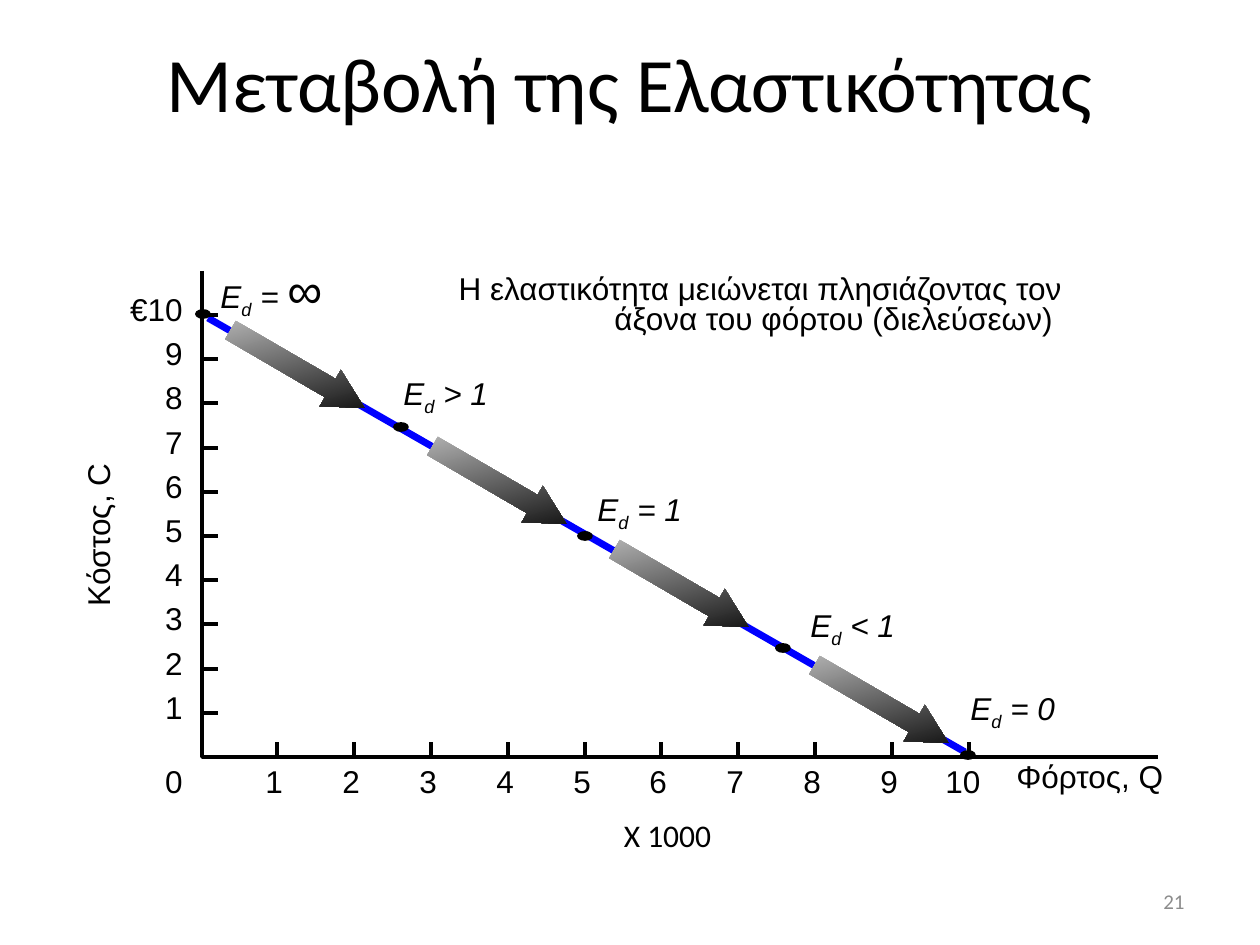
from pptx import Presentation
from pptx.dml.color import RGBColor
from pptx.enum.shapes import MSO_CONNECTOR, MSO_SHAPE
from pptx.enum.text import MSO_ANCHOR, MSO_AUTO_SIZE, PP_ALIGN
from pptx.oxml.xmlchemy import OxmlElement
from pptx.util import Pt

BLACK = RGBColor(0x00, 0x00, 0x00)
BLUE = RGBColor(0x00, 0x00, 0xFF)
SILVER = RGBColor(0xBC, 0xBC, 0xBC)
GRAY = RGBColor(0x8C, 0x8C, 0x8C)
LEFT, CENTER, RIGHT = PP_ALIGN.LEFT, PP_ALIGN.CENTER, PP_ALIGN.RIGHT
TOP, MIDDLE = MSO_ANCHOR.TOP, MSO_ANCHOR.MIDDLE
FIT_SHAPE = MSO_AUTO_SIZE.SHAPE_TO_FIT_TEXT
STRAIGHT = MSO_CONNECTOR.STRAIGHT
OVAL, RIGHT_ARROW = MSO_SHAPE.OVAL, MSO_SHAPE.RIGHT_ARROW

EMU_PER_PX = 914400 / 126
SLIDE_WIDTH, SLIDE_HEIGHT = 1260, 945
TITLE_ONLY = 5

ORIGIN_X, ORIGIN_Y = 202, 757
AXIS_TOP, AXIS_RIGHT = 271, 1158
FIRST_TICK_X, LAST_TICK_X = 277, 969
TOP_TICK_Y = 315
TICK_COUNT = 10

POINTS = [
    ((203, 314), (208, 253), " = ", "∞"),
    ((401, 427), (391, 368), " > 1", ""),
    ((585, 536), (585, 484), " = 1", ""),
    ((783, 648), (798, 600), " < 1", ""),
    ((968, 755), (958, 683), " = 0", ""),
]
ARROWS = [(220, 348), (422, 464), (604, 567), (804, 683)]


def px(length):
    return round(length * EMU_PER_PX)


def add_run(paragraph, text, size=18, font="Arial", color=BLACK, italic=False, baseline=0):
    run = paragraph.add_run()
    run.text = text
    run.font.size = Pt(size)
    run.font.name = font
    run.font.color.rgb = color
    run.font.italic = italic
    if baseline:
        run._r.get_or_add_rPr().set("baseline", str(baseline * 1000))


class SlideBuilder:
    line_width = 2

    def __init__(self, slide):
        self.slide = slide
        self.shapes = slide.shapes

    def place(self, shape, left, top, width, height):
        shape.left, shape.top = px(left), px(top)
        shape.width, shape.height = px(width), px(height)

    def title(self, text, box):
        shape = self.shapes.title
        self.place(shape, *box)
        shape.text_frame.vertical_anchor = MIDDLE
        paragraph = shape.text_frame.paragraphs[0]
        paragraph.alignment = CENTER
        add_run(paragraph, text, size=44, font="Calibri")

    def text(self, text, box, align=LEFT, wrap=False, anchor=TOP, spacing=None, rotation=0, **style):
        shape = self.shapes.add_textbox(*map(px, box))
        shape.rotation = rotation
        frame = shape.text_frame
        frame.word_wrap = wrap
        frame.auto_size = FIT_SHAPE
        frame.vertical_anchor = anchor
        paragraph = frame.paragraphs[0]
        paragraph.alignment = align
        if spacing:
            paragraph.line_spacing = spacing
        add_run(paragraph, text, **style)
        return paragraph

    def line(self, start, end, color=BLACK, width=line_width):
        connector = self.shapes.add_connector(STRAIGHT, *map(px, start + end))
        connector.line.color.rgb = color
        connector.line.width = Pt(width)
        connector._element.spPr.append(OxmlElement("a:effectLst"))

    def axes(self, *corners):
        first, *rest = [tuple(map(px, corner)) for corner in corners]
        builder = self.shapes.build_freeform(*first)
        builder.add_line_segments(rest, close=False)
        shape = builder.convert_to_shape()
        shape.shadow.inherit = False
        shape.fill.background()
        shape.line.color.rgb = BLACK
        shape.line.width = Pt(self.line_width)

    def dot(self, center, width=14, height=8):
        x, y = center
        shape = self.shapes.add_shape(OVAL, *map(px, (x - width / 2, y - height / 2, width, height)))
        shape.shadow.inherit = False
        shape.fill.solid()
        shape.fill.fore_color.rgb = BLACK
        shape.line.color.rgb = BLACK
        shape.line.width = Pt(1)

    def elasticity(self, position, relation, symbol):
        width, height = (151, 71) if symbol else (140, 63)
        paragraph = self.text("E", (*position, width, height), italic=True)
        add_run(paragraph, "d", italic=True, baseline=-25)
        add_run(paragraph, relation, italic=True)
        if symbol:
            add_run(paragraph, symbol, size=28)

    def arrow(self, position):
        shape = self.shapes.add_shape(RIGHT_ARROW, *map(px, (*position, 155, 42)))
        shape.shadow.inherit = False
        shape.adjustments[0] = 0.5
        shape.adjustments[1] = 0.94
        shape.rotation = 30.2
        shape.line.fill.background()
        shape.fill.gradient()
        shape.fill.gradient_angle = 315
        for stop, position, color in zip(shape.fill.gradient_stops, (0, 1), (SILVER, BLACK)):
            stop.position = position
            stop.color.rgb = color


def draw_axes(builder):
    builder.axes((ORIGIN_X, AXIS_TOP), (ORIGIN_X, ORIGIN_Y), (AXIS_RIGHT, ORIGIN_Y))
    builder.text("0", (147, 756, 48, 63), align=RIGHT)
    step_x = (LAST_TICK_X - FIRST_TICK_X) / (TICK_COUNT - 1)
    step_y = (ORIGIN_Y - TOP_TICK_Y) / TICK_COUNT
    for value in range(1, TICK_COUNT + 1):
        x = round(FIRST_TICK_X + (value - 1) * step_x)
        y = round(ORIGIN_Y - value * step_y)
        is_last = value == TICK_COUNT
        builder.line((204, y), (218, y))
        builder.line((x, ORIGIN_Y), (x, ORIGIN_Y - 15))
        cost_width, load_width = (78, 72) if is_last else (48, 48)
        cost = f"€{value}" if is_last else str(value)
        builder.text(cost, (195 - cost_width, y - 31, cost_width, 50), align=RIGHT)
        builder.text(str(value), (x - load_width // 2, 756, load_width, 63))
    builder.text("Κόστος, C", (13, 509, 169, 50), rotation=270)
    builder.text("Φόρτος, Q", (1004, 751, 174, 50))


def main():
    presentation = Presentation()
    presentation.slide_width = px(SLIDE_WIDTH)
    presentation.slide_height = px(SLIDE_HEIGHT)
    slide = presentation.slides.add_slide(presentation.slide_layouts[TITLE_ONLY])
    builder = SlideBuilder(slide)

    builder.title("Μεταβολή της Ελαστικότητας", (0, 3, 1260, 158))
    builder.line((208, 318), (965, 752), color=BLUE, width=4)
    draw_axes(builder)
    for center, label_position, relation, symbol in POINTS:
        builder.dot(center)
        builder.elasticity(label_position, relation, symbol)
    for position in ARROWS:
        builder.arrow(position)
    builder.text(
        "Η ελαστικότητα μειώνεται πλησιάζοντας τον άξονα του φόρτου (διελεύσεων) ",
        (444, 270, 630, 74), align=RIGHT, wrap=True, spacing=0.8,
    )
    builder.text("X 1000", (501, 810, 333, 50), align=CENTER, wrap=True, font="Calibri")
    builder.text(
        "21", (903, 876, 294, 50), align=RIGHT, wrap=True, anchor=MIDDLE,
        size=12, font="Calibri", color=GRAY,
    )
    presentation.save("out.pptx")


if __name__ == "__main__":
    main()
